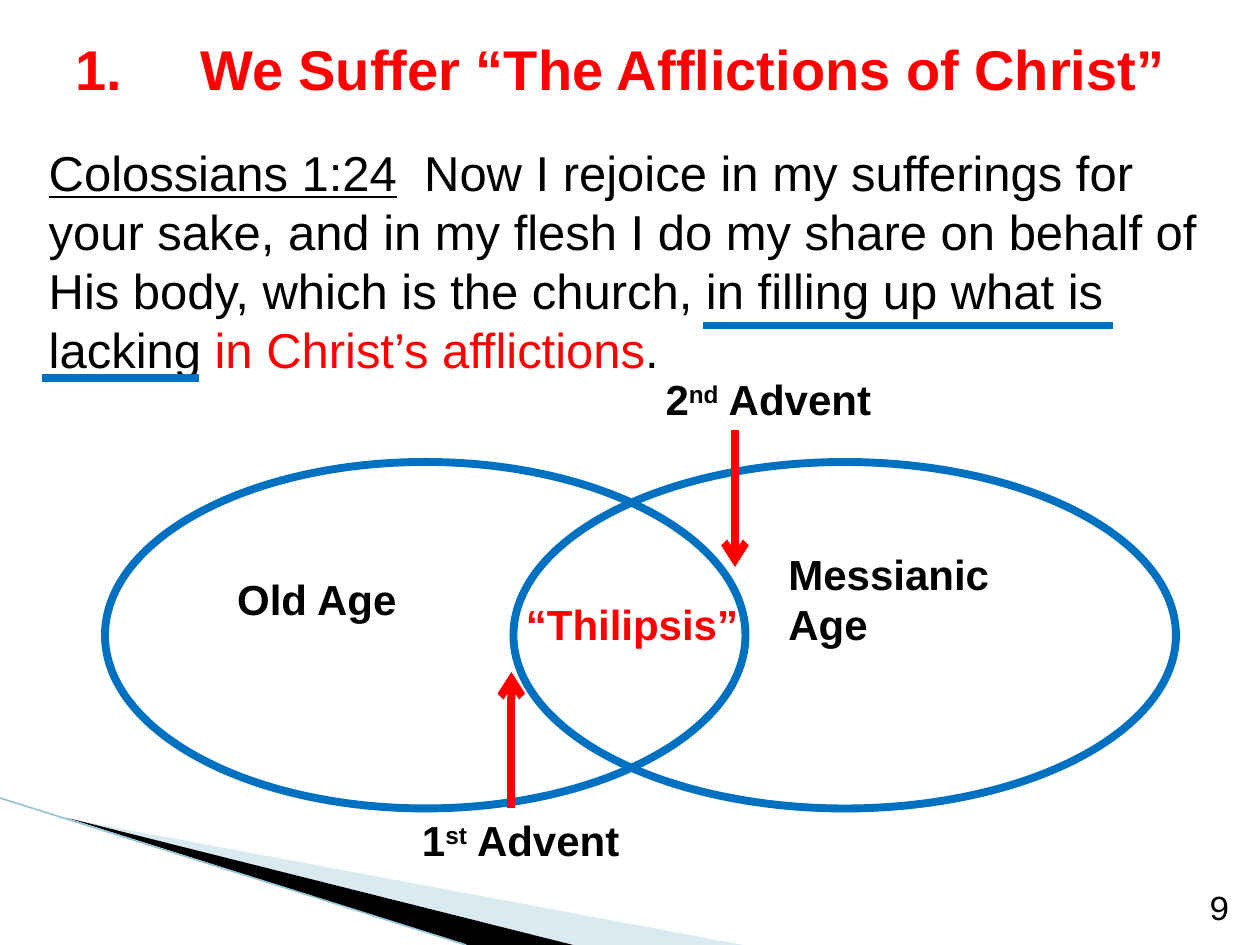
from lxml.etree import SubElement
from pptx import Presentation
from pptx.dml.color import RGBColor
from pptx.enum.shapes import MSO_CONNECTOR, MSO_SHAPE
from pptx.enum.text import MSO_ANCHOR, PP_ALIGN
from pptx.oxml.ns import qn
from pptx.util import Inches, Pt

BLACK = RGBColor(0x00, 0x00, 0x00)
RED = RGBColor(0xFF, 0x00, 0x00)
BLUE = RGBColor(0x00, 0x70, 0xC0)
PALE = RGBColor(0xA0, 0xCB, 0xDC)
EDGE = RGBColor(0x97, 0xC5, 0xD8)

PLAIN = {"name": "Arial", "size": Pt(28), "bold": False}
LABEL = {"name": "Arial", "size": Pt(24), "bold": True}
TITLE = {"name": "Arial", "size": Pt(32), "bold": True}
NUMBER = {"name": "Courier New", "size": Pt(20), "bold": False}


class SlideBuilder:
    unit = Inches(1) / 12
    stroke = Pt(4.5)

    def __init__(self, deck):
        self.page = deck.slides.add_slide(deck.slide_layouts[6])

    def grid(self, *values):
        return [round(value * self.unit) for value in values]

    def text(self, area, spans, style, tab=None, **frame_format):
        box = self.page.shapes.add_textbox(*self.grid(*area))
        frame = box.text_frame
        frame.word_wrap = True
        align = frame_format.pop("align", PP_ALIGN.LEFT)
        for key, value in frame_format.items():
            setattr(frame, key, value)
        para = frame.paragraphs[0]
        if tab:
            stops = SubElement(para._p.get_or_add_pPr(), qn("a:tabLst"))
            SubElement(stops, qn("a:tab"), pos=str(Inches(tab)), algn="l")
        para.alignment = align
        para.line_spacing = Pt(style["size"].pt * 1.2)
        for words, color, extra in spans:
            span = para.add_run()
            span.text = words
            for key, value in {**style, **extra}.items():
                if key == "baseline":
                    span._r.get_or_add_rPr().set(key, value)
                else:
                    setattr(span.font, key, value)
            span.font.color.rgb = color

    def label(self, left, top, words, color=BLACK, width=24.6, height=6):
        self.text((left, top, width, height), [(words, color, {})], LABEL)

    def advent(self, left, top, digit, ending):
        spans = [(digit, BLACK, {}), (ending, BLACK, {"baseline": "30000"}), (" Advent", BLACK, {})]
        self.text((left, top, 24.6, 6), spans, LABEL)

    def ellipse(self, *area):
        shape = self.page.shapes.add_shape(MSO_SHAPE.OVAL, *self.grid(*area))
        shape.shadow.inherit = False
        shape.fill.background()
        shape.line.color.rgb = BLUE
        shape.line.width = self.stroke

    def line(self, ends, color, width=stroke, arrow=False):
        line = self.page.shapes.add_connector(MSO_CONNECTOR.STRAIGHT, *self.grid(*ends))
        line.line.color.rgb = color
        line.line.width = width
        if arrow:
            SubElement(line.line._get_or_add_ln(), qn("a:tailEnd"), type="arrow")
        SubElement(line._element.spPr, qn("a:effectLst"))

    def wedge(self, points, color, opacity=100):
        start, *rest = [tuple(Inches(value) for value in point) for point in points]
        builder = self.page.shapes.build_freeform(*start)
        builder.add_line_segments(rest, close=True)
        shape = builder.convert_to_shape()
        shape.shadow.inherit = False
        shape.line.fill.background()
        shape.fill.solid()
        shape.fill.fore_color.rgb = color
        if opacity < 100:
            tint = shape._element.spPr.find(".//" + qn("a:srgbClr"))
            SubElement(tint, qn("a:alpha"), val=str(opacity * 1000))


def main():
    deck = Presentation()
    deck.slide_width, deck.slide_height = Inches(10), Inches(7.5)
    slide = SlideBuilder(deck)

    slide.wedge([(0.55, 6.5), (5.9, 7.5), (4.56, 7.5)], PALE, 40)
    slide.wedge([(0.53, 6.49), (4.55, 7.5), (3.7, 7.5)], BLACK)
    slide.line((0, 76, 44.4, 90), EDGE, Pt(0.95))

    verse = [
        ("Colossians 1:24", BLACK, {"underline": True}),
        ("\tNow I rejoice in my sufferings for your sake, and in my flesh I do my share "
         "on behalf of His body, which is the church, in filling up what is lacking ", BLACK, {}),
        ("in Christ’s afflictions", RED, {}),
        (".", BLACK, {}),
    ]
    slide.text((2, 13, 116, 65.9), verse, PLAIN, tab=2.98, margin_left=Inches(0.22))
    slide.text((6, 2, 108, 9), [("1.\tWe Suffer “The Afflictions of Christ”", RED, {})],
               TITLE, tab=0.99, vertical_anchor=MSO_ANCHOR.MIDDLE)

    slide.ellipse(10, 44, 61, 33)
    slide.ellipse(48.9, 44, 63.1, 33)
    slide.label(21.4, 54, "Old Age")
    slide.label(73.9, 51.6, "Messianic Age", width=25.8, height=10.9)
    slide.advent(39, 77, "1", "st")
    slide.line((48.7, 77, 48.7, 64), RED, arrow=True)
    slide.label(48.9, 56.4, "“Thilipsis”", RED)
    slide.advent(62.2, 35, "2", "nd")
    slide.line((70, 41, 70, 54), RED, arrow=True)
    slide.line((67, 31, 106, 31), BLUE)
    slide.line((4, 36, 19, 36), BLUE)
    slide.text((110, 84.1, 8.3, 4.8), [("9", BLACK, {})], NUMBER,
               align=PP_ALIGN.RIGHT, vertical_anchor=MSO_ANCHOR.BOTTOM)

    deck.save("out.pptx")


if __name__ == "__main__":
    main()
